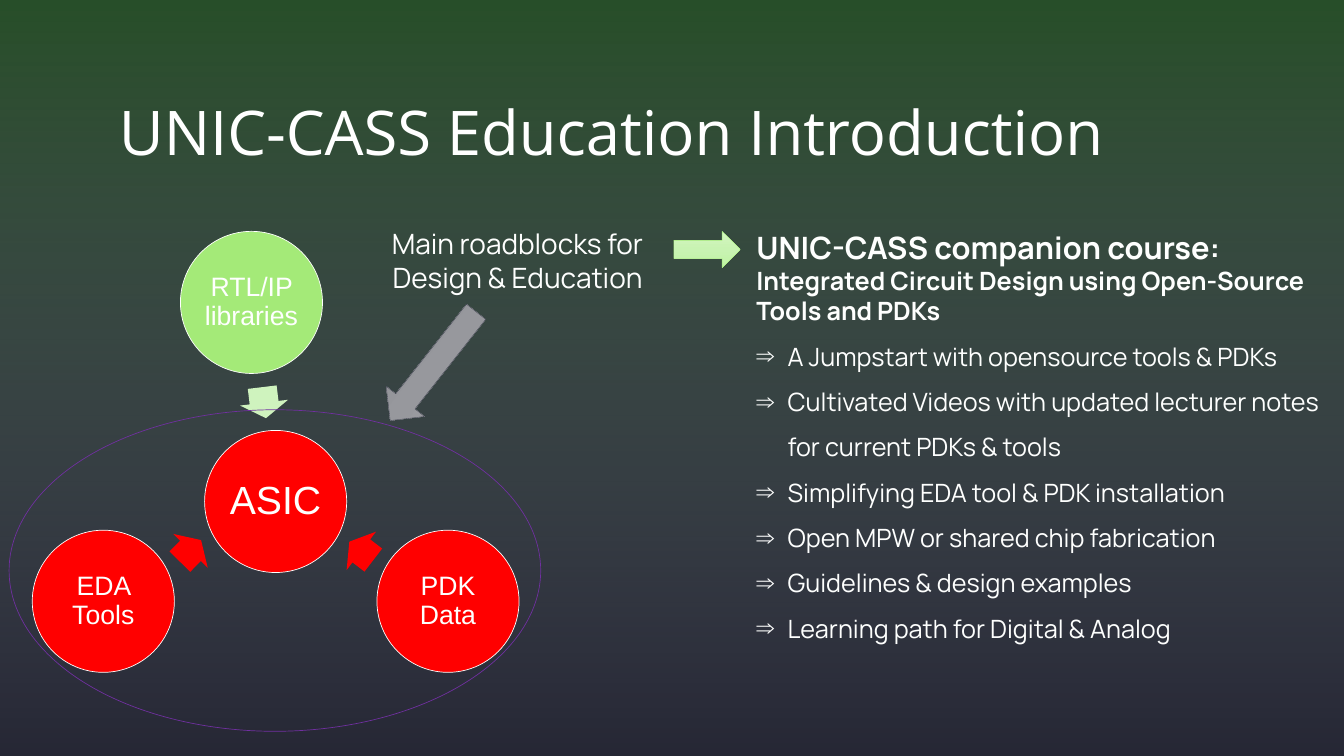
"""Build the UNIC-CASS education introduction slide."""
from typing import NamedTuple, Optional

from lxml.etree import SubElement
from pptx import Presentation
from pptx.dml.color import RGBColor
from pptx.enum.shapes import MSO_SHAPE as Preset
from pptx.enum.text import MSO_ANCHOR as Anchor, MSO_AUTO_SIZE as AutoSize, PP_ALIGN as Align
from pptx.oxml.ns import qn
from pptx.util import Emu, Pt

PX = 9144
DIAMETER = 282
INDENT = 62
COLORS = {
    "white": "FFFFFF", "text": "FEFFFE", "red": "FF0000", "green": "A4EA78",
    "pale": "CFF3BE", "purple": "7030A0", "slate": "3E414F", "night": "151623",
    "forest": "30662C", "mist": "A2A5B6",
    "gray_top": "A4A5A9", "gray_mid": "97989D", "gray_end": "85868C",
    "lime_top": "D3F6C0", "lime_mid": "C8F3B2", "lime_end": "C0F4A4",
}


class Stop(NamedTuple):
    position: int
    color: str
    opacity: int = 100


class Box(NamedTuple):
    left: int
    top: int
    width: int
    height: int


class Circle(NamedTuple):
    label: str
    left: int
    top: int
    color: str
    size: int = 38


class Arrow(NamedTuple):
    box: Box
    rotation: float
    color: str


class Line(NamedTuple):
    text: str
    size: int = 36
    bold: bool = False
    bullet: bool = False


CIRCLES = [
    Circle("ASIC", 406, 854, "red", 56),
    Circle("RTL/IP libraries", 358, 459, "green"),
    Circle("PDK Data", 748, 1052, "red"),
    Circle("EDA Tools", 64, 1052, "red"),
]
FLOW_ARROWS = [
    Arrow(Box(493, 751, 62, 96), 83.1, "pale"),
    Arrow(Box(687, 1045, 60, 96), 217.5, "red"),
    Arrow(Box(348, 1045, 60, 96), 314.5, "red"),
]
GRAY = [Stop(0, "gray_top"), Stop(50, "gray_mid"), Stop(100, "gray_end")]
LIME = [Stop(0, "lime_top"), Stop(50, "lime_mid"), Stop(100, "lime_end")]
TOPICS = [
    "A Jumpstart with opensource tools & PDKs",
    "Cultivated Videos with updated lecturer notes for current PDKs & tools",
    "Simplifying EDA tool & PDK installation",
    "Open MPW or shared chip fabrication",
    "Guidelines & design examples",
    "Learning path for Digital & Analog",
]
COURSE = [
    Line("UNIC-CASS companion course:", 44, True),
    Line("Integrated Circuit Design using Open-Source Tools and PDKs", bold=True),
    *(Line(topic, bullet=True) for topic in TOPICS),
]


def px(length: int) -> Emu:
    return Emu(length * PX)


def rgb(name: str) -> RGBColor:
    return RGBColor.from_string(COLORS[name])


def place(shape, box: Box) -> None:
    shape.left, shape.top, shape.width, shape.height = map(px, box)


def fill_gradient(owner, fill, stops: list[Stop]) -> None:
    fill.gradient()
    fill.gradient_angle = 270
    stop_list = owner.element.find(".//" + qn("a:gsLst"))
    stop_list.clear()
    for stop in stops:
        node = SubElement(stop_list, qn("a:gs"), pos=str(stop.position * 1000))
        color = SubElement(node, qn("a:srgbClr"), val=COLORS[stop.color])
        if stop.opacity < 100:
            SubElement(color, qn("a:alpha"), val=str(stop.opacity * 1000))


def add_preset(shapes, preset, box: Box, fill: Optional[str] = None,
               line: Optional[str] = None, weight: float = 1):
    shape = shapes.add_shape(preset, *map(px, box))
    shape.shadow.inherit = False
    if fill:
        shape.fill.solid()
        shape.fill.fore_color.rgb = rgb(fill)
    else:
        shape.fill.background()
    if line:
        shape.line.color.rgb = rgb(line)
        shape.line.width = Pt(weight)
    else:
        shape.line.fill.background()
    return shape


def style(para, font_name: str, size: int, color: str = "text", bold: bool = False) -> None:
    font = para.font
    font.name, font.size, font.bold = font_name, Pt(size), bold
    font.color.rgb = rgb(color)


def draw_circle(shapes, circle: Circle) -> None:
    box = Box(circle.left, circle.top, DIAMETER, DIAMETER)
    shape = add_preset(shapes, Preset.OVAL, box, circle.color, "text")
    frame = shape.text_frame
    frame.word_wrap = True
    frame.vertical_anchor = Anchor.MIDDLE
    frame.margin_left = frame.margin_right = frame.margin_top = frame.margin_bottom = px(5)
    para = frame.paragraphs[0]
    para.text = circle.label
    para.alignment = Align.CENTER
    para.line_spacing = 0.9
    style(para, "Arial", circle.size)


def draw_flow_arrow(shapes, arrow: Arrow) -> None:
    shape = add_preset(shapes, Preset.RIGHT_ARROW, arrow.box, arrow.color)
    shape.adjustments[0] = 0.6
    shape.rotation = arrow.rotation


def draw_gradient_arrow(shapes, box: Box, stops: list[Stop], line: str, rotation: float = 0) -> None:
    shape = add_preset(shapes, Preset.RIGHT_ARROW, box, line=line, weight=0.5)
    fill_gradient(shape, shape.fill, stops)
    shape.rotation = rotation


def write_lines(frame, lines: list[Line], alignment) -> None:
    frame.word_wrap = True
    frame.auto_size = AutoSize.NONE
    frame.vertical_anchor = Anchor.TOP
    for index, line in enumerate(lines):
        para = frame.paragraphs[0] if index == 0 else frame.add_paragraph()
        para.text = line.text
        para.alignment = alignment
        para.space_before = Pt(0)
        para.line_spacing = 1.5 if line.bullet else 1.0
        properties = para._p.get_or_add_pPr()
        indent = px(INDENT) if line.bullet else 0
        properties.set("marL", str(indent))
        properties.set("indent", str(-indent))
        if line.bullet:
            SubElement(properties, qn("a:buChar"), char="⇒")
        else:
            SubElement(properties, qn("a:buNone"))
        style(para, "Manrope", line.size, bold=line.bold)


def main() -> None:
    deck = Presentation()
    deck.slide_width, deck.slide_height = px(2667), px(1500)
    page = deck.slides.add_slide(deck.slide_layouts[1])
    shapes = page.shapes
    fill_gradient(page, page.background.fill, [Stop(0, "forest"), Stop(100, "mist")])

    title, course = shapes.title, page.placeholders[1]
    shade = add_preset(shapes, Preset.RECTANGLE, Box(0, 0, 2667, 1500))
    fill_gradient(shade, shade.fill, [Stop(0, "night", 29), Stop(100, "night", 88)])
    title.element.addprevious(shade.element)

    place(title, Box(232, 183, 2133, 238))
    frame = title.text_frame
    frame.auto_size = AutoSize.NONE
    frame.vertical_anchor = Anchor.TOP
    frame.margin_left = frame.margin_right = frame.margin_top = frame.margin_bottom = px(4)
    heading = frame.paragraphs[0]
    heading.text = "UNIC-CASS Education Introduction"
    heading.alignment = Align.LEFT
    style(heading, "Open Sans", 88, "white")

    diagram = shapes.add_group_shape().shapes
    for arrow in FLOW_ARROWS:
        draw_flow_arrow(diagram, arrow)
    for circle in CIRCLES:
        draw_circle(diagram, circle)

    roadblocks = shapes.add_textbox(*map(px, Box(681, 445, 692, 145)))
    captions = [Line("Main roadblocks for", 40), Line("Design & Education", 40)]
    write_lines(roadblocks.text_frame, captions, Align.CENTER)
    add_preset(shapes, Preset.OVAL, Box(18, 813, 1055, 638), line="purple")
    draw_gradient_arrow(shapes, Box(722, 678, 275, 97), GRAY, "slate", 128.3)
    place(course, Box(1491, 448, 1167, 833))
    write_lines(course.text_frame, COURSE, Align.LEFT)
    draw_gradient_arrow(shapes, Box(1337, 459, 132, 72), LIME, "green")
    deck.save("out.pptx")


if __name__ == "__main__":
    main()
